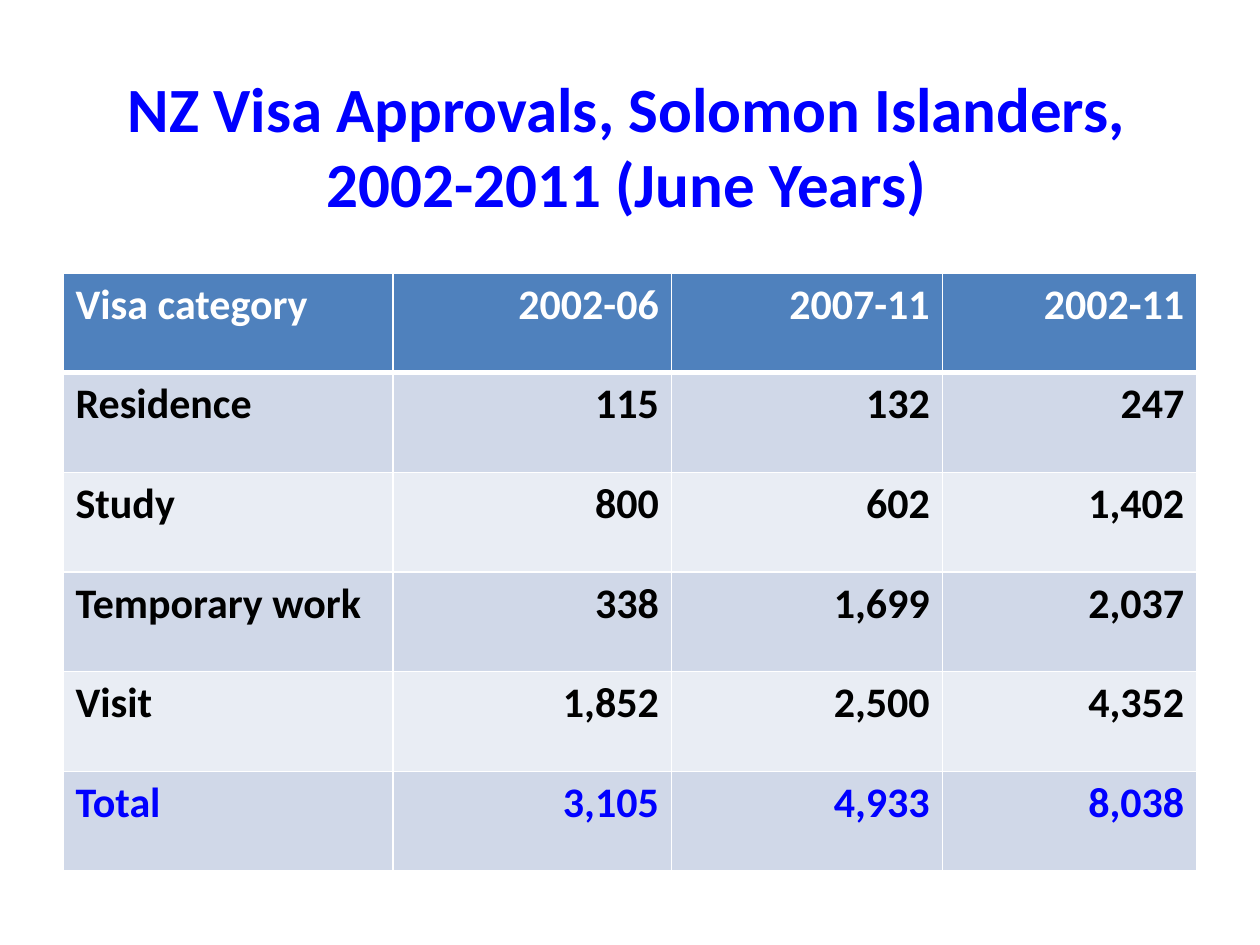
"""Build the slide on New Zealand visa approvals for Solomon Islanders."""
import dataclasses
import typing

import lxml.etree
import pptx
import pptx.dml.color
import pptx.enum.text
import pptx.oxml.ns
import pptx.util

SLIDE_WIDTH = pptx.util.Inches(10)
SLIDE_HEIGHT = pptx.util.Inches(7.5)
ALIGN = pptx.enum.text.PP_ALIGN
ANCHOR = pptx.enum.text.MSO_ANCHOR


@dataclasses.dataclass(frozen=True)
class Theme:
    """Colours, type sizes and line widths of the slide."""
    font: str = "Calibri"
    accent: str = "0000FF"
    header: str = "4F81BD"
    bands: tuple[str, str] = ("D0D8E8", "E9EDF4")
    white: str = "FFFFFF"
    black: str = "000000"
    title_size: float = 36
    table_size: float = 24
    rule: float = 1
    header_rule: float = 3


@dataclasses.dataclass(frozen=True)
class Area:
    """A rectangle given as shares of the slide's size."""
    left: float
    top: float
    width: float
    height: float

    def lengths(self) -> dict[str, int]:
        """Return the rectangle in slide units."""
        return {
            "left": int(self.left * SLIDE_WIDTH),
            "top": int(self.top * SLIDE_HEIGHT),
            "width": int(self.width * SLIDE_WIDTH),
            "height": int(self.height * SLIDE_HEIGHT),
        }


@dataclasses.dataclass(frozen=True)
class RowStyle:
    """Colours and horizontal rules of one table row."""
    fill: str
    text: str
    top_rule: float
    bottom_rule: float


THEME = Theme()
TITLE = "NZ Visa Approvals, Solomon Islanders, 2002-2011 (June Years)"
TITLE_AREA = Area(0.083, 0.077, 0.829, 0.152)
TABLE_AREA = Area(0.05, 0.289, 0.9, 0.633)
COLUMN_SHARES = (0.262, 0.221, 0.215, 0.202)
ROWS = (
    ("Visa category", "2002-06", "2007-11", "2002-11"),
    ("Residence", "115", "132", "247"),
    ("Study", "800", "602", "1,402"),
    ("Temporary work", "338", "1,699", "2,037"),
    ("Visit", "1,852", "2,500", "4,352"),
    ("Total", "3,105", "4,933", "8,038"),
)


def set_values(target: typing.Any, values: dict[str, typing.Any]) -> None:
    """Set each named attribute on the target."""
    for name, value in values.items():
        setattr(target, name, value)


def write_text(frame: typing.Any, text: str, size: float, color: str, alignment: typing.Any) -> None:
    """Write one bold paragraph into a text frame."""
    paragraph = frame.paragraphs[0]
    paragraph.alignment = alignment
    run = paragraph.add_run()
    run.text = text
    set_values(run.font, {"name": THEME.font, "size": pptx.util.Pt(size), "bold": True})
    run.font.color.rgb = pptx.dml.color.RGBColor.from_string(color)


def draw_borders(cell: typing.Any, style: RowStyle) -> None:
    """Give a cell white borders on all four sides."""
    qualify = pptx.oxml.ns.qn
    properties = cell._tc.get_or_add_tcPr()
    widths = {"lnL": THEME.rule, "lnR": THEME.rule, "lnT": style.top_rule, "lnB": style.bottom_rule}
    for position, (side, width) in enumerate(widths.items()):
        line = lxml.etree.Element(qualify(f"a:{side}"), w=str(pptx.util.Pt(width)))
        fill = lxml.etree.SubElement(line, qualify("a:solidFill"))
        lxml.etree.SubElement(fill, qualify("a:srgbClr"), val=THEME.white)
        properties.insert(position, line)


def row_style(index: int) -> RowStyle:
    """Return the style of the row at an index."""
    if index == 0:
        return RowStyle(THEME.header, THEME.white, THEME.rule, THEME.header_rule)
    text = THEME.accent if index == len(ROWS) - 1 else THEME.black
    top_rule = THEME.header_rule if index == 1 else THEME.rule
    return RowStyle(THEME.bands[(index - 1) % 2], text, top_rule, THEME.rule)


def draw_title(slide: typing.Any) -> None:
    """Place and fill the title placeholder."""
    title = slide.shapes.title
    set_values(title, TITLE_AREA.lengths())
    set_values(title.text_frame, {"word_wrap": True, "vertical_anchor": ANCHOR.MIDDLE})
    write_text(title.text_frame, TITLE, THEME.title_size, THEME.accent, ALIGN.CENTER)


def draw_table(slide: typing.Any) -> None:
    """Draw the table of visa approvals."""
    shape = slide.shapes.add_table(len(ROWS), len(COLUMN_SHARES), **TABLE_AREA.lengths())
    table = shape.table
    for column, share in zip(table.columns, COLUMN_SHARES):
        column.width = int(share * SLIDE_WIDTH)
    for row_index, texts in enumerate(ROWS):
        style = row_style(row_index)
        for column_index, text in enumerate(texts):
            cell = table.cell(row_index, column_index)
            cell.fill.solid()
            cell.fill.fore_color.rgb = pptx.dml.color.RGBColor.from_string(style.fill)
            draw_borders(cell, style)
            alignment = ALIGN.RIGHT if column_index else ALIGN.LEFT
            write_text(cell.text_frame, text, THEME.table_size, style.text, alignment)


def main() -> None:
    """Build and save the presentation."""
    presentation = pptx.Presentation()
    set_values(presentation, {"slide_width": SLIDE_WIDTH, "slide_height": SLIDE_HEIGHT})
    slide = presentation.slides.add_slide(presentation.slide_layouts.get_by_name("Title Only"))
    draw_title(slide)
    draw_table(slide)
    presentation.save("out.pptx")


if __name__ == "__main__":
    main()
